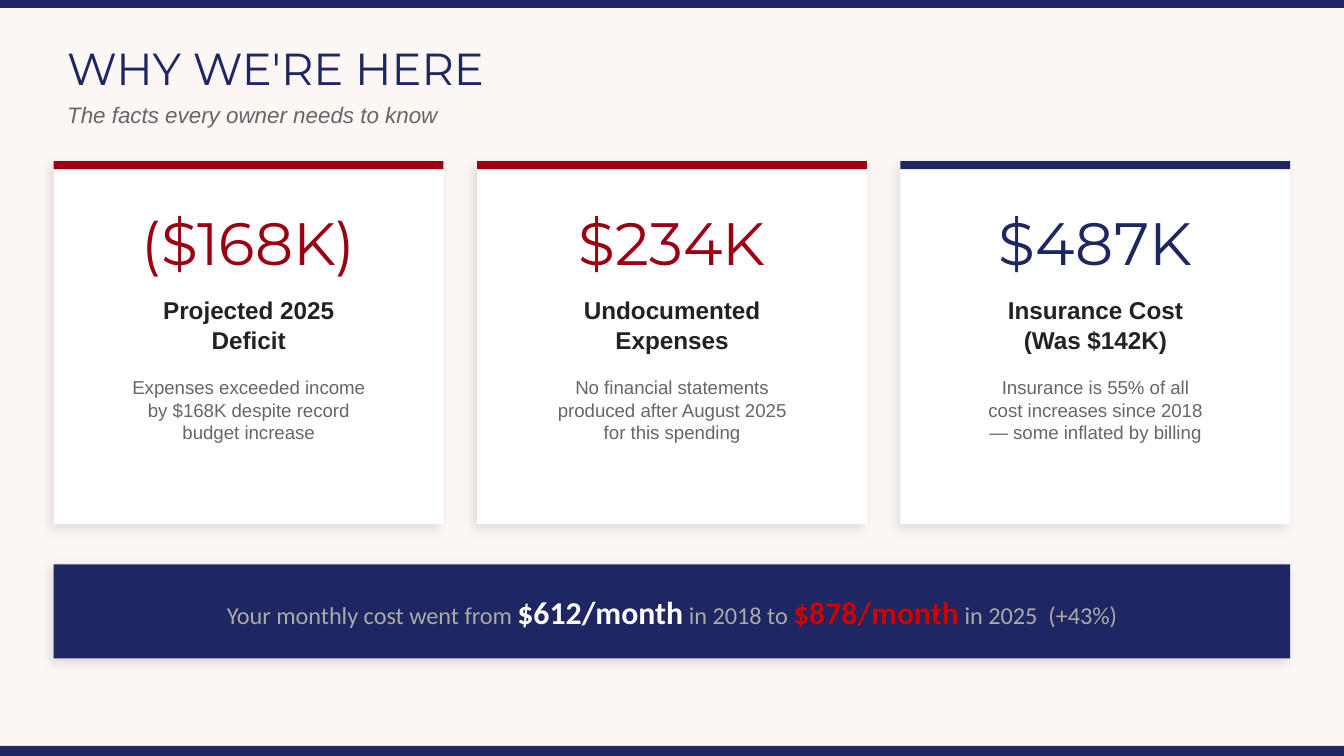
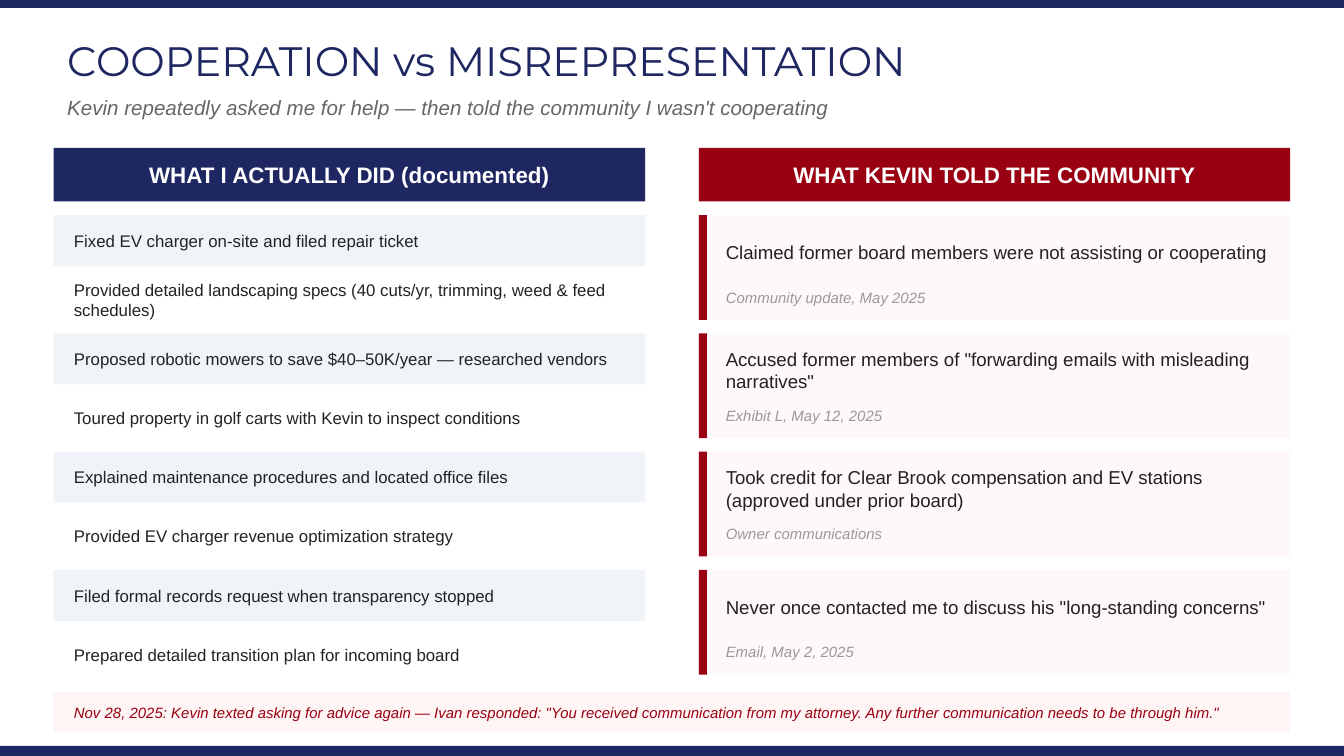
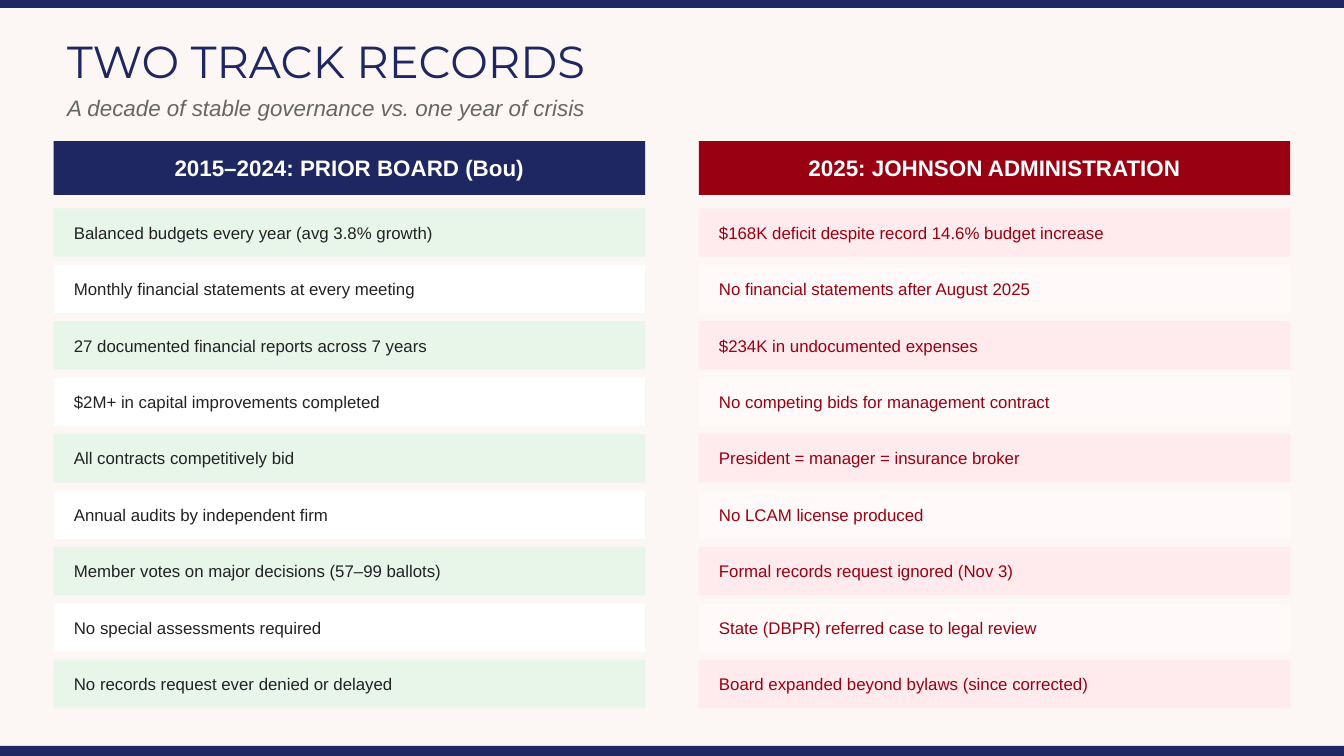
from lxml.etree import SubElement
from pptx import Presentation
from pptx.dml.color import RGBColor
from pptx.enum.shapes import MSO_SHAPE
from pptx.enum.text import MSO_ANCHOR, MSO_AUTO_SIZE, PP_ALIGN
from pptx.oxml.ns import qn
from pptx.util import Inches, Pt

# Shared style
NAVY, RED, CREAM, WHITE = "1E2761", "990011", "FCF6F5", "FFFFFF"
INK, GREY, PALE_GREY = "222222", "666666", "999999"
HEADING_FONT, BODY_FONT, BANNER_FONT = "Montserrat", "Arial", "Calibri"
SLIDE_WIDTH = 10
SLIDE_HEIGHT = SLIDE_WIDTH * 9 / 16
FOOTER_TOP = 5.55
MARGIN, CONTENT_WIDTH = 0.4, 9.2
COLUMN_WIDTH, RIGHT_COLUMN = 4.4, 5.2
TEXT_INSET = 0.15


def color(hex_code):
    return RGBColor.from_string(hex_code)


def style_run(run, size, ink, font=BODY_FONT, bold=False, italic=False):
    run.font.size = Pt(size)
    run.font.name = font
    run.font.color.rgb = color(ink)
    run.font.bold = bold
    run.font.italic = italic


def prepare_frame(frame, align=PP_ALIGN.LEFT, anchor=MSO_ANCHOR.MIDDLE):
    frame.word_wrap = True
    frame.auto_size = MSO_AUTO_SIZE.NONE
    frame.vertical_anchor = anchor
    frame.margin_left = frame.margin_right = 0
    frame.margin_top = frame.margin_bottom = 0
    for paragraph in frame.paragraphs:
        paragraph.alignment = align


def write(frame, text, size, ink, align=PP_ALIGN.LEFT, anchor=MSO_ANCHOR.MIDDLE, **style):
    frame.text = text
    prepare_frame(frame, align, anchor)
    for paragraph in frame.paragraphs:
        for run in paragraph.runs:
            style_run(run, size, ink, **style)


def add_text_area(slide, left, top, width, height):
    area = slide.shapes.add_textbox(
        Inches(left), Inches(top), Inches(width), Inches(height))
    return area.text_frame


def add_label(slide, left, top, width, height, text, size, ink, **style):
    write(add_text_area(slide, left, top, width, height), text, size, ink, **style)


def add_panel(slide, left, top, width, height, fill):
    panel = slide.shapes.add_shape(
        MSO_SHAPE.RECTANGLE, Inches(left), Inches(top), Inches(width), Inches(height))
    panel.shadow.inherit = False
    panel.fill.solid()
    panel.fill.fore_color.rgb = color(fill)
    panel.line.fill.background()
    return panel


# Filled strip with a line of text set in from its sides
def add_strip(slide, left, top, width, height, fill, text, size, ink, **style):
    add_panel(slide, left, top, width, height, fill)
    add_label(slide, left + TEXT_INSET, top, width - 2 * TEXT_INSET, height,
              text, size, ink, **style)


def add_soft_shadow(panel, opacity, blur, distance):
    effects = panel.element.spPr.find(qn("a:effectLst"))
    shadow = SubElement(effects, qn("a:outerShdw"), blurRad=str(Pt(blur)),
                        dist=str(Pt(distance)), dir=str(135 * 60000),
                        algn="bl", rotWithShape="0")
    black = SubElement(shadow, qn("a:srgbClr"), val="000000")
    SubElement(black, qn("a:alpha"), val=str(opacity * 1000))


# Slide frame: background, top band, title and subtitle
def start_slide(deck, background, title, subtitle, title_top=0.2,
                title_size=24, subtitle_size=12):
    slide = deck.slides.add_slide(deck.slide_layouts[5])
    slide.background.fill.solid()
    slide.background.fill.fore_color.rgb = color(background)
    add_panel(slide, 0, 0, SLIDE_WIDTH, 0.06, NAVY)

    heading = slide.shapes.title
    heading.left, heading.top = Inches(0.5), Inches(title_top)
    heading.width, heading.height = Inches(9), Inches(0.5)
    write(heading.text_frame, title, title_size, NAVY, font=HEADING_FONT)
    add_label(slide, 0.5, title_top + 0.45, 9, 0.3, subtitle,
              subtitle_size, GREY, italic=True)
    return slide


def add_footer_band(slide):
    add_panel(slide, 0, FOOTER_TOP, SLIDE_WIDTH, SLIDE_HEIGHT - FOOTER_TOP, NAVY)


# Fact card: accent bar, figure, caption and explanation
def add_fact_card(slide, left, top, accent, figure, caption, explanation):
    width = 2.9
    card = add_panel(slide, left, top, width, 2.7, WHITE)
    add_soft_shadow(card, 10, 6, 3)
    add_panel(slide, left, top, width, 0.06, accent)
    add_label(slide, left, top + 0.25, width, 0.7, figure, 32, accent,
              align=PP_ALIGN.CENTER, font=HEADING_FONT)
    inner_left, inner_width = left + TEXT_INSET, width - 2 * TEXT_INSET
    add_label(slide, inner_left, top + 1, inner_width, 0.55, caption, 13, INK,
              align=PP_ALIGN.CENTER, anchor=MSO_ANCHOR.TOP, bold=True)
    add_label(slide, inner_left, top + 1.6, inner_width, 0.9, explanation, 10, GREY,
              align=PP_ALIGN.CENTER, anchor=MSO_ANCHOR.TOP)


# Monthly cost banner with mixed emphasis
def add_cost_banner(slide, left, top, phrases):
    height = 0.7
    banner = add_panel(slide, left, top, CONTENT_WIDTH, height, NAVY)
    add_soft_shadow(banner, 12, 5, 2)
    message = add_text_area(slide, left, top, CONTENT_WIDTH, height)
    prepare_frame(message, PP_ALIGN.CENTER)
    for phrase, size, ink, bold in phrases:
        run = message.paragraphs[0].add_run()
        run.text = phrase
        style_run(run, size, ink, BANNER_FONT, bold)


def add_column_header(slide, left, top, text, fill):
    add_panel(slide, left, top, COLUMN_WIDTH, 0.4, fill)
    add_label(slide, left, top, COLUMN_WIDTH, 0.4, text, 12, WHITE,
              align=PP_ALIGN.CENTER, bold=True)


# Column of rows in alternating tints
def add_striped_rows(slide, left, top, rows, tints, row_height, ink=INK):
    for index, row in enumerate(rows):
        add_strip(slide, left, top + index * (row_height + 0.06), COLUMN_WIDTH,
                  row_height, tints[index % 2], row, 9, ink)


# Claim card: accent edge, statement and where it was made
def add_claim(slide, left, top, statement, origin):
    add_panel(slide, left, top, COLUMN_WIDTH, 0.78, "FFF8F8")
    add_panel(slide, left, top, 0.06, 0.78, RED)
    add_label(slide, left + 0.2, top + 0.05, 4.05, 0.45, statement, 10, INK)
    add_label(slide, left + 0.2, top + 0.5, 4.05, 0.22, origin, 8, PALE_GREY, italic=True)


def build_facts_slide(deck):
    slide = start_slide(deck, CREAM, "WHY WE'RE HERE",
                        "The facts every owner needs to know", title_top=0.25)
    facts = [
        (RED, "($168K)", "Projected 2025\nDeficit",
         "Expenses exceeded income\nby $168K despite record\nbudget increase"),
        (RED, "$234K", "Undocumented\nExpenses",
         "No financial statements\nproduced after August 2025\nfor this spending"),
        (NAVY, "$487K", "Insurance Cost\n(Was $142K)",
         "Insurance is 55% of all\ncost increases since 2018\n— some inflated by billing"),
    ]
    for index, fact in enumerate(facts):
        add_fact_card(slide, MARGIN + index * 3.15, 1.2, *fact)
    add_cost_banner(slide, MARGIN, 4.2, [
        ("Your monthly cost went from ", 13, "AAAAAA", False),
        ("$612/month", 17, WHITE, True),
        (" in 2018 to ", 13, "AAAAAA", False),
        ("$878/month", 17, "CC0000", True),
        (" in 2025  (+43%)", 13, "AAAAAA", False),
    ])
    add_footer_band(slide)


def build_cooperation_slide(deck):
    slide = start_slide(
        deck, WHITE, "COOPERATION vs MISREPRESENTATION",
        "Kevin repeatedly asked me for help — then told the community I wasn't cooperating",
        title_size=22, subtitle_size=11)

    add_column_header(slide, MARGIN, 1.1, "WHAT I ACTUALLY DID (documented)", NAVY)
    add_striped_rows(slide, MARGIN, 1.6, [
        "Fixed EV charger on-site and filed repair ticket",
        "Provided detailed landscaping specs (40 cuts/yr, trimming, weed & feed schedules)",
        "Proposed robotic mowers to save $40–50K/year — researched vendors",
        "Toured property in golf carts with Kevin to inspect conditions",
        "Explained maintenance procedures and located office files",
        "Provided EV charger revenue optimization strategy",
        "Filed formal records request when transparency stopped",
        "Prepared detailed transition plan for incoming board",
    ], ("F0F4F8", WHITE), 0.38)

    add_column_header(slide, RIGHT_COLUMN, 1.1, "WHAT KEVIN TOLD THE COMMUNITY", RED)
    claims = [
        ("Claimed former board members were not assisting or cooperating",
         "Community update, May 2025"),
        ('Accused former members of "forwarding emails with misleading narratives"',
         "Exhibit L, May 12, 2025"),
        ("Took credit for Clear Brook compensation and EV stations "
         "(approved under prior board)", "Owner communications"),
        ('Never once contacted me to discuss his "long-standing concerns"',
         "Email, May 2, 2025"),
    ]
    for index, (statement, origin) in enumerate(claims):
        add_claim(slide, RIGHT_COLUMN, 1.6 + index * 0.88, statement, origin)

    add_strip(slide, MARGIN, 5.15, CONTENT_WIDTH, 0.3, "FFF5F5",
              "Nov 28, 2025: Kevin texted asking for advice again — Ivan responded: "
              '"You received communication from my attorney. '
              'Any further communication needs to be through him."',
              8, RED, italic=True)
    add_footer_band(slide)


def build_track_records_slide(deck):
    slide = start_slide(deck, CREAM, "TWO TRACK RECORDS",
                        "A decade of stable governance vs. one year of crisis")
    prior_board = [
        "Balanced budgets every year (avg 3.8% growth)",
        "Monthly financial statements at every meeting",
        "27 documented financial reports across 7 years",
        "$2M+ in capital improvements completed",
        "All contracts competitively bid",
        "Annual audits by independent firm",
        "Member votes on major decisions (57–99 ballots)",
        "No special assessments required",
        "No records request ever denied or delayed",
    ]
    administration = [
        "$168K deficit despite record 14.6% budget increase",
        "No financial statements after August 2025",
        "$234K in undocumented expenses",
        "No competing bids for management contract",
        "President = manager = insurance broker",
        "No LCAM license produced",
        "Formal records request ignored (Nov 3)",
        "State (DBPR) referred case to legal review",
        "Board expanded beyond bylaws (since corrected)",
    ]
    columns = [
        (MARGIN, "2015–2024: PRIOR BOARD (Bou)", NAVY, prior_board, ("E8F5E9", WHITE), INK),
        (RIGHT_COLUMN, "2025: JOHNSON ADMINISTRATION", RED, administration,
         ("FFEBEE", "FFF9F9"), RED),
    ]
    for left, header, fill, records, tints, ink in columns:
        add_column_header(slide, left, 1.05, header, fill)
        add_striped_rows(slide, left, 1.55, records, tints, 0.36, ink)
    add_footer_band(slide)


def main():
    deck = Presentation()
    deck.slide_width, deck.slide_height = Inches(SLIDE_WIDTH), Inches(SLIDE_HEIGHT)
    build_facts_slide(deck)
    build_cooperation_slide(deck)
    build_track_records_slide(deck)
    deck.save("out.pptx")


if __name__ == "__main__":
    main()
